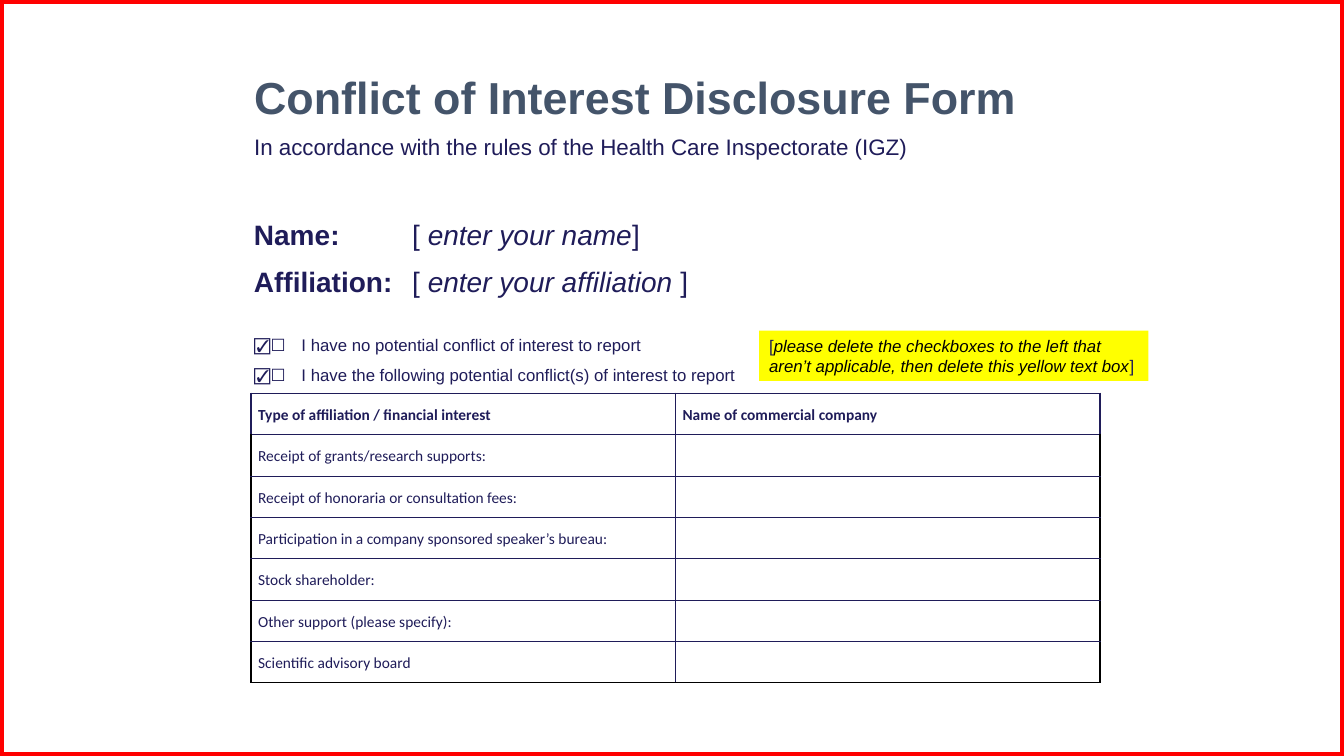
from lxml import etree
from pptx import Presentation
from pptx.dml.color import RGBColor
from pptx.enum import shapes, text
from pptx.oxml import ns
from pptx.util import Inches, Pt

NAVY, SLATE, BLACK, WHITE = "1F1C59", "44546A", "000000", "FFFFFF"
RED, YELLOW = "FF0000", "FFFF00"
LEFT = 2.42

TITLE = "Conflict of Interest Disclosure Form"
RULES = "In accordance with the rules of the Health Care Inspectorate (IGZ)"
FIELDS = [
    ("Name:", ["[ ", "enter your name", "]"]),
    ("Affiliation:", ["[ ", "enter your affiliation ", "]"]),
]
CLAIMS = [
    "I have no potential conflict of interest to report",
    "I have the following potential conflict(s) of interest to report",
]
NOTE = ("please delete the checkboxes to the left that aren’t applicable, "
        "then delete this yellow text box")
ROWS = [
    ("Type of affiliation / financial interest", "Name of commercial company"),
    ("Receipt of grants/research supports:", ""),
    ("Receipt of honoraria or consultation fees:", ""),
    ("Participation in a company sponsored speaker’s bureau:", ""),
    ("Stock shareholder:", ""),
    ("Other support (please specify):", ""),
    ("Scientific advisory board", ""),
]


def color(code):
    return RGBColor.from_string(code)


def write(para, words, size=12, font="Arial", ink=NAVY, bold=False,
          italic=False, space=None, after=0):
    """Add one run to a paragraph and set the paragraph's spacing."""
    para.alignment = text.PP_ALIGN.LEFT
    para.space_before, para.space_after = Pt(0), Pt(after)
    if space:
        para.line_spacing = space
    run = para.add_run()
    run.text = words
    face = run.font
    face.name, face.size, face.bold, face.italic = font, Pt(size), bold, italic
    face.color.rgb = color(ink)
    if font.startswith("Noto"):
        for tag in ("a:ea", "a:sym"):
            etree.SubElement(face._element, ns.qn(tag), typeface=font)


def place(shape, x, y, w, h):
    shape.left, shape.top = Inches(x), Inches(y)
    shape.width, shape.height = Inches(w), Inches(h)


def setup(frame, anchor=text.MSO_ANCHOR.TOP):
    frame.word_wrap = True
    frame.auto_size = text.MSO_AUTO_SIZE.NONE
    frame.vertical_anchor = anchor
    return frame


def add_box(x, y, w, h):
    return setup(slide.shapes.add_textbox(
        Inches(x), Inches(y), Inches(w), Inches(h)).text_frame)


def add_rect(x, y, w, h):
    rect = slide.shapes.add_shape(
        shapes.MSO_SHAPE.RECTANGLE, Inches(x), Inches(y), Inches(w), Inches(h))
    rect.shadow.inherit = False
    return rect


def edge(cell, sides):
    """Draw cell borders given as (tag, color, points), in L, R, T, B order."""
    props = cell._tc.get_or_add_tcPr()
    for spot, (tag, ink, width) in enumerate(sides):
        line = etree.Element(ns.qn("a:" + tag), w=str(Pt(width)))
        fill = etree.SubElement(line, ns.qn("a:solidFill"))
        etree.SubElement(fill, ns.qn("a:srgbClr"), val=ink)
        props.insert(spot, line)


def add_table(x, y, col_w, row_h):
    last = len(ROWS) - 1
    frame = slide.shapes.add_table(
        len(ROWS), 2, Inches(x), Inches(y),
        Inches(2 * col_w), Inches(len(ROWS) * row_h))
    table = frame.table
    table.first_row = table.horz_banding = False
    for col in table.columns:
        col.width = Inches(col_w)
    thin, navy, black = (NAVY, 0.25), (NAVY, 1), (BLACK, 1)
    for r, row in enumerate(ROWS):
        table.rows[r].height = Inches(row_h)
        outer = black if r else navy
        top = thin if r > 1 else navy
        base = navy if r == 0 else black if r == last else thin
        for c, words in enumerate(row):
            cell = table.cell(r, c)
            cell.fill.solid()
            cell.fill.fore_color.rgb = color(WHITE)
            cell.vertical_anchor = text.MSO_ANCHOR.MIDDLE
            cell.margin_left = cell.margin_right = Inches(0.07)
            cell.margin_top = cell.margin_bottom = 0
            if words:
                write(cell.text_frame.paragraphs[0], words, size=11,
                      font="Calibri", bold=r == 0, space=1.15, after=10)
            edge(cell, [("lnL", *(thin if c else outer)),
                        ("lnR", *(outer if c else thin)),
                        ("lnT", *top), ("lnB", *base)])


deck = Presentation()
deck.slide_width, deck.slide_height = Inches(13.33), Inches(7.5)
slide = deck.slides.add_slide(deck.slide_layouts[1])
title, body = slide.placeholders

border = add_rect(0, 0, 13.33, 7.5)
border.fill.background()
border.line.color.rgb = color(RED)
border.line.width = Pt(6)

place(title, LEFT, 0.58, 8.5, 1.12)
head = setup(title.text_frame, text.MSO_ANCHOR.MIDDLE)
write(head.paragraphs[0], TITLE, size=32, ink=SLATE, bold=True)
write(head.add_paragraph(), RULES, size=16, space=Pt(26))

for i, (label, parts) in enumerate(FIELDS):
    y = 2.11 + 0.46 * i
    write(add_box(LEFT, y, 1.65, 0.5).paragraphs[0], label, size=20, bold=True)
    entry = add_box(3.99, y, 6.53, 0.5).paragraphs[0]
    for n, part in enumerate(parts):
        write(entry, part, size=20, italic=n == 1)

place(body, 2.89, 3.17, 8.5, 0.9)
claims = setup(body.text_frame)
checks = add_box(LEFT, 3.17, 0.55, 0.9)
for i, claim in enumerate(CLAIMS):
    para = claims.add_paragraph() if i else claims.paragraphs[0]
    write(para, claim, space=Pt(21.6))
    props = para._p.get_or_add_pPr()
    props.set("marL", "0")
    props.set("indent", "0")
    etree.SubElement(props, ns.qn("a:buNone"))
    mark = checks.add_paragraph() if i else checks.paragraphs[0]
    write(mark, "☑", space=Pt(21.6))
    write(mark, "☐", font="Noto Sans CJK JP", space=Pt(21.6))

add_table(2.49, 3.9, 4.21, 0.41)

note = add_rect(7.53, 3.28, 3.86, 0.5)
note.fill.solid()
note.fill.fore_color.rgb = color(YELLOW)
note.line.fill.background()
hint = setup(note.text_frame).paragraphs[0]
write(hint, "[")
write(hint, NOTE, ink=BLACK, italic=True)
write(hint, "]")

deck.save("out.pptx")
